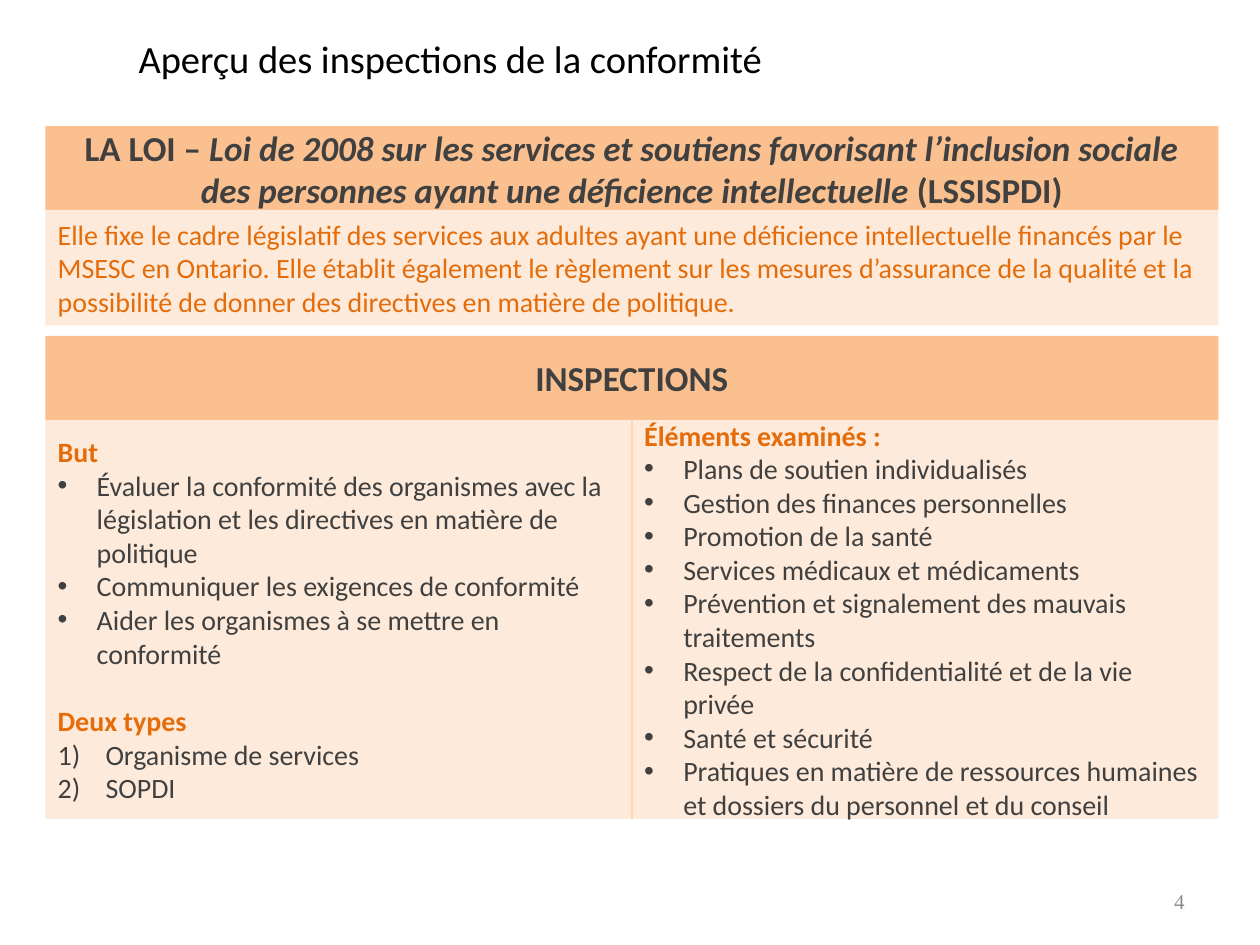
from lxml import etree
from pptx import Presentation
from pptx.dml.color import RGBColor
from pptx.enum.shapes import MSO_CONNECTOR, MSO_SHAPE
from pptx.enum.text import MSO_ANCHOR, PP_ALIGN
from pptx.oxml.ns import qn
from pptx.util import Inches, Pt

RECT = MSO_SHAPE.RECTANGLE
LEFT, CENTER, RIGHT = PP_ALIGN.LEFT, PP_ALIGN.CENTER, PP_ALIGN.RIGHT
MIDDLE = MSO_ANCHOR.MIDDLE
PEACH, PALE, ORANGE, GREY = "FAC090", "FDEADA", "E46C0A", "404040"

prs = Presentation()
prs.slide_width, prs.slide_height = Inches(10), Inches(7.5)
slide = prs.slides.add_slide(prs.slide_layouts[5])

# Grid: rows of a third of an inch, two equal columns
ROW = Inches(1 / 3)
MARGIN, COLUMN = Inches(0.36), Inches(4.655)


def rgb(color):
    return RGBColor.from_string(color)


def write(frame, paragraphs, align=LEFT):
    """Fill a frame with (runs, marker, space before); a run is (text, font values)."""
    frame.word_wrap = True
    frame.vertical_anchor = MIDDLE
    for i, (runs, marker, before) in enumerate(paragraphs):
        paragraph = frame.paragraphs[0] if i == 0 else frame.add_paragraph()
        paragraph.alignment = align
        if before:
            paragraph.space_before = Pt(before)
        if marker:
            tag, key, value, indent = marker
            props = paragraph._p.get_or_add_pPr()
            props.set("marL", str(Inches(indent)))
            props.set("indent", str(-Inches(indent)))
            if tag == "a:buChar":
                etree.SubElement(props, qn("a:buFont")).set("typeface", "Arial")
            etree.SubElement(props, qn(tag)).set(key, value)
        for text, values in runs:
            run = paragraph.add_run()
            run.text = text
            for name, value in {"name": "Calibri", **values}.items():
                if name == "color":
                    run.font.color.rgb = rgb(value)
                else:
                    setattr(run.font, name, value)


BULLET = ("a:buChar", "char", "•", 0.31)
NUMBER = ("a:buAutoNum", "type", "arabicParenR", 0.38)
banner = {"size": Pt(20), "bold": True, "color": GREY}
law_name = {**banner, "italic": True}
intro = {"size": Pt(16), "color": ORANGE}
heading = {**intro, "bold": True}
item = {"size": Pt(16), "color": GREY}

title = slide.shapes.title
title.left, title.top, title.width, title.height = (
    Inches(1), Inches(0.17), Inches(7.5), Inches(0.58))
write(title.text_frame, [([("Aperçu des inspections de la conformité",
                           {"size": Pt(22), "color": "000000"})], None, 0)])

law = [([("LA LOI – ", banner),
         ("Loi de 2008 sur les services et soutiens favorisant l’inclusion sociale "
          "des personnes ayant une déficience intellectuelle", law_name),
         (" (LSSISPDI)", banner)], None, 0)]
law_summary = [([(
    "Elle fixe le cadre législatif des services aux adultes ayant une déficience "
    "intellectuelle financés par le MSESC en Ontario. Elle établit également le "
    "règlement sur les mesures d’assurance de la qualité et la possibilité de donner "
    "des directives en matière de politique.", intro)], None, 0)]
inspections = [([("INSPECTIONS", banner)], None, 0)]

goals = ["Évaluer la conformité des organismes avec la législation et les directives "
         "en matière de politique",
         "Communiquer les exigences de conformité",
         "Aider les organismes à se mettre en conformité"]
kinds = ["Organisme de services", "SOPDI"]
examined = ["Plans de soutien individualisés",
            "Gestion des finances personnelles",
            "Promotion de la santé",
            "Services médicaux et médicaments",
            "Prévention et signalement des mauvais traitements",
            "Respect de la confidentialité et de la vie privée",
            "Santé et sécurité",
            "Pratiques en matière de ressources humaines et dossiers du personnel "
            "et du conseil"]
purpose = ([([("But", heading)], None, 0)]
           + [([(goal, item)], BULLET, 0) for goal in goals]
           + [([("Deux types", heading)], None, 19.5)]
           + [([(kind, item)], NUMBER, 0) for kind in kinds])
elements = ([([("Éléments examinés\u00a0:", heading)], None, 0)]
            + [([(element, item)], BULLET, 0) for element in examined])

# column, row, columns wide, rows high, fill, alignment, content
panels = [
    (0, 3, 2, 2, PEACH, CENTER, law),
    (0, 8, 2, 2, PEACH, CENTER, inspections),
    (0, 5, 2, 2.75, PALE, LEFT, law_summary),
    (0, 10, 1, 9.5, PALE, LEFT, purpose),
    (1, 10, 1, 9.5, PALE, LEFT, elements),
]
for column, row, wide, high, fill, align, content in panels:
    panel = slide.shapes.add_shape(
        RECT, MARGIN + column * COLUMN, int(row * ROW), wide * COLUMN, int(high * ROW))
    panel.shadow.inherit = False
    panel.fill.solid()
    panel.fill.fore_color.rgb = rgb(fill)
    panel.line.fill.background()
    write(panel.text_frame, content, align)

middle = MARGIN + COLUMN
divider = slide.shapes.add_connector(
    MSO_CONNECTOR.STRAIGHT, middle, 10 * ROW, middle, int(19.5 * ROW))
divider.line.color.rgb = rgb("FCD5B5")
divider.line.width = Pt(0.75)
etree.SubElement(divider._element.spPr, qn("a:effectLst"))

page_number = slide.shapes.add_textbox(
    Inches(7.17), Inches(6.95), Inches(2.33), Inches(0.4))
write(page_number.text_frame, [([("4", {
    "name": "Times New Roman", "size": Pt(12), "color": "8C8C8C"})], None, 0)], RIGHT)

prs.save("out.pptx")
